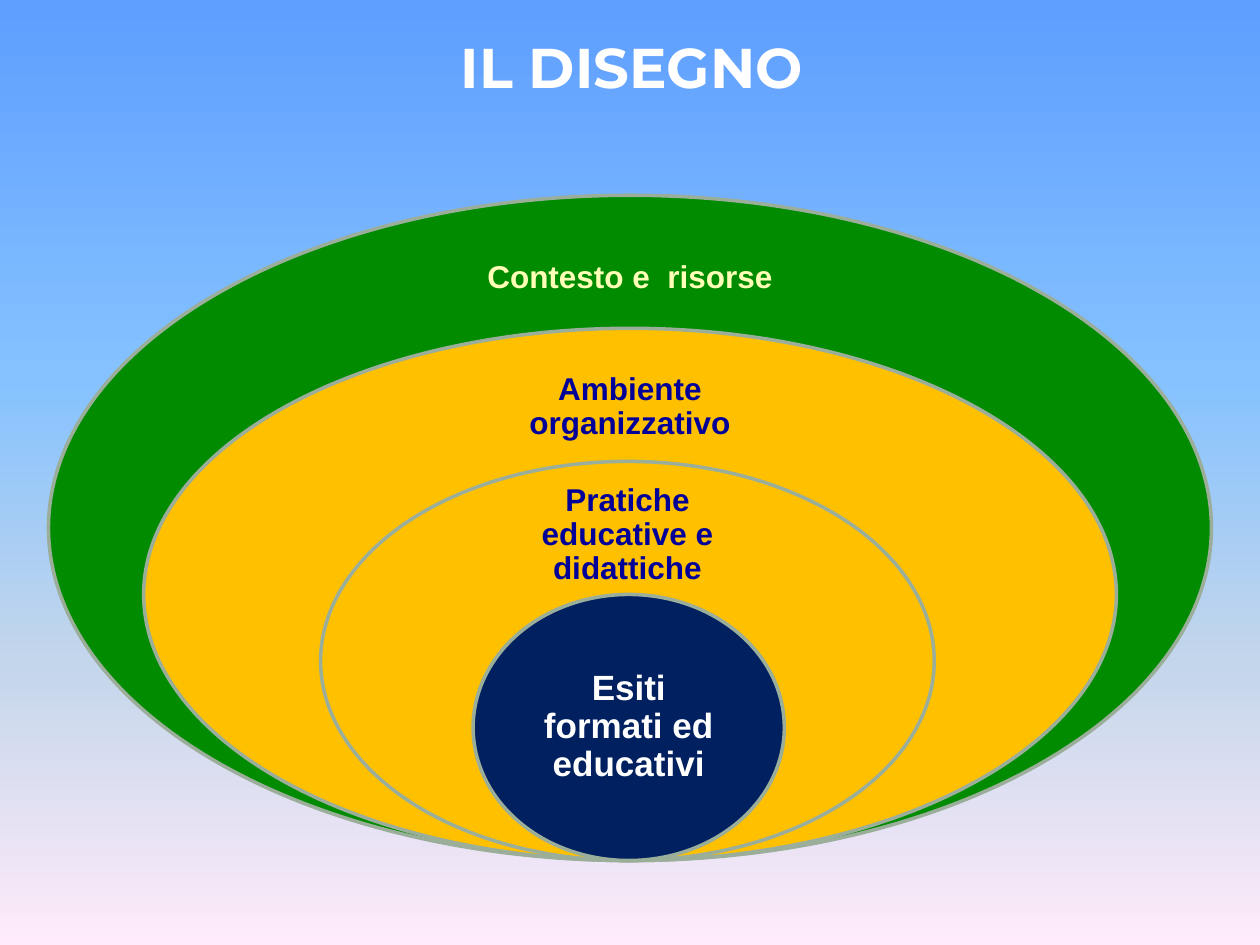
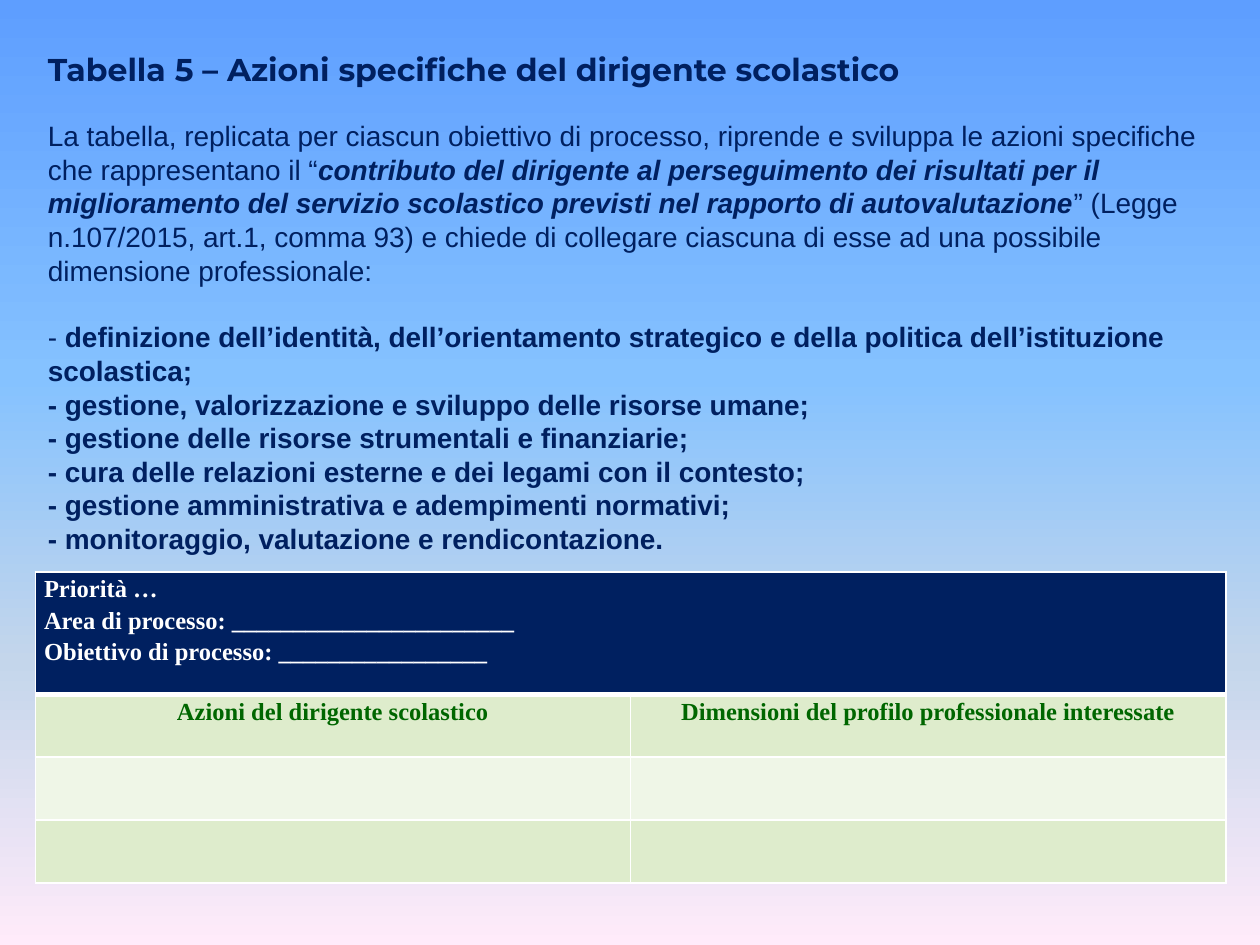
from copy import deepcopy

from lxml import etree
from pptx import Presentation
from pptx import util as u
from pptx.dml.color import RGBColor
from pptx.enum import shapes, text
from pptx.oxml import ns

# Content
COLORS = {
    "navy": "002060", "blue": "000099", "green": "008B00", "amber": "FFC000",
    "cream": "FFFFB7", "white": "FFFFFF", "outline": "9AAE9A",
    "leaf": "006600", "row dark": "DEECCC", "row light": "EFF6E7",
}
BACKGROUND = [(0, "5E9EFF"), (0.4, "85C2FF"), (0.7, "C4D6EB"), (1, "FFEBFA")]

DIAGRAM_TITLE = "IL DISEGNO"
RING_BOTTOM, RING_HEIGHT, RING_STEP = 6.83, 5.28, 0.2
# centre, ring width, fill, label, label (top, width, height), inset, size, colour
RINGS = [
    (5.0, 9.23, "green", "Contesto e  risorse", (1.81, 2.58, 0.79), 0.14, 18, "cream"),
    (5.0, 7.72, "amber", "Ambiente organizzativo", (2.85, 2.7, 0.76), 0.14, 18, "blue"),
    (4.98, 4.87, "amber", "Pratiche educative e didattiche", (3.89, 2.27, 0.71), 0.14, 18, "blue"),
    (4.99, 2.47, "navy", "Esiti formati ed educativi", (5.24, 1.75, 1.06), 0.16, 20, "white"),
]

TABLE_TITLE = "Tabella 5 – Azioni specifiche del dirigente scolastico"
INTRO = [
    ("La tabella, replicata per ciascun obiettivo di processo, riprende e sviluppa "
     "le azioni specifiche che rappresentano il “", {}),
    ("contributo del dirigente al perseguimento dei risultati per il miglioramento "
     "del servizio scolastico previsti nel rapporto di autovalutazione",
     {"bold": True, "italic": True}),
    ("” (Legge n.107/2015, art.1, comma 93) e chiede di collegare ciascuna di esse "
     "ad una possibile dimensione professionale:", {}),
]
DIMENSIONS = [
    "definizione dell’identità, dell’orientamento strategico e della politica "
    "dell’istituzione scolastica;",
    "gestione, valorizzazione e sviluppo delle risorse umane;",
    "gestione delle risorse strumentali e finanziarie;",
    "cura delle relazioni esterne e dei legami con il contesto;",
    "gestione amministrativa e adempimenti normativi;",
    "monitoraggio, valutazione e rendicontazione.",
]
OBJECTIVE = ["Priorità …", "Area di processo: " + "_" * 23,
             "Obiettivo di processo: " + "_" * 17]
COLUMNS = ["Azioni del dirigente scolastico",
           "Dimensioni del profilo professionale interessate"]
ROW_HEIGHTS = [0.97, 0.5, 0.5, 0.5]
ROW_FILLS = ["navy", "row dark", "row light", "row dark"]


# Shared helpers
def color(name):
    return RGBColor.from_string(COLORS[name])


def inches(*lengths):
    return [u.Inches(length) for length in lengths]


def write(frame, words, *, size, ink, font="Arial", bold=False, italic=False,
          align="LEFT", spacing=None, after=0, extend=False):
    """Add a paragraph, or extend the last one; a blank frame is filled first."""
    para = frame.paragraphs[-1]
    if para.runs and not extend:
        para = frame.add_paragraph()
    para.alignment = getattr(text.PP_ALIGN, align)
    para.line_spacing = spacing
    para.space_after = u.Pt(after)
    span = para.add_run()
    span.text = words
    span.font.name, span.font.size = font, u.Pt(size)
    span.font.bold, span.font.italic = bold, italic
    span.font.color.rgb = color(ink)


def set_insets(target, side, top, bottom):
    target.margin_left = target.margin_right = u.Inches(side)
    target.margin_top, target.margin_bottom = inches(top, bottom)


def paint_background(master):
    fill = master.background.fill
    fill.gradient()
    fill.gradient_angle = 270
    stop_list = next(master.element.iter(ns.qn("a:gsLst")))
    for _ in range(len(BACKGROUND) - len(stop_list)):
        stop_list.append(deepcopy(stop_list[0]))
    for stop, (position, tint) in zip(fill.gradient_stops, BACKGROUND):
        stop.position = position
        stop.color.rgb = RGBColor.from_string(tint)


def add_titled_page(deck, left, top, width, height, inset_top=0.05):
    page = deck.slides.add_slide(deck.slide_layouts[5])
    title = page.shapes.title
    title.left, title.top, title.width, title.height = inches(left, top, width, height)
    frame = title.text_frame
    frame.word_wrap = True
    frame.auto_size = text.MSO_AUTO_SIZE.NONE
    frame.vertical_anchor = text.MSO_ANCHOR.TOP
    set_insets(frame, 0.1, inset_top, 0.05)
    return page, frame


def add_border(cell, side, width):
    line = etree.SubElement(cell._tc.get_or_add_tcPr(), ns.qn(f"a:ln{side}"),
                            w=str(u.Pt(width)))
    fill = etree.SubElement(line, ns.qn("a:solidFill"))
    etree.SubElement(fill, ns.qn("a:srgbClr"), val=COLORS["white"])


# Nested rings
def build_diagram(deck):
    page, title = add_titled_page(deck, 0.92, 0.21, 8.19, 0.64)
    write(title, DIAGRAM_TITLE, size=32, ink="white", font="Montserrat",
          bold=True, align="CENTER")
    for index, (center, width, fill, label, place, inset, size, ink) in enumerate(RINGS):
        height = RING_HEIGHT * (1 - RING_STEP * index)
        ring = page.shapes.add_shape(
            shapes.MSO_SHAPE.OVAL,
            *inches(center - width / 2, RING_BOTTOM - height, width, height))
        ring.shadow.inherit = False
        ring.fill.solid()
        ring.fill.fore_color.rgb = color(fill)
        ring.line.color.rgb = color("outline")
        ring.line.width = u.Pt(2)

        top, label_width, label_height = place
        box = page.shapes.add_textbox(
            *inches(center - label_width / 2, top, label_width, label_height))
        frame = box.text_frame
        frame.word_wrap = True
        frame.vertical_anchor = text.MSO_ANCHOR.MIDDLE
        set_insets(frame, inset, inset, inset)
        write(frame, label, size=size, ink=ink, bold=True, align="CENTER", spacing=0.9)


# Explanation and form
def build_form(deck):
    page, frame = add_titled_page(deck, 0.28, 0.13, 9.45, 4.35, inset_top=0.27)
    write(frame, TABLE_TITLE, size=18, ink="navy", font="Montserrat", bold=True, after=17.5)
    for index, (words, style) in enumerate(INTRO):
        write(frame, words, size=16, ink="navy", after=19, extend=index > 0, **style)
    for index, words in enumerate(DIMENSIONS):
        write(frame, "- ", size=16, ink="navy", bold=index > 0)
        write(frame, words, size=16, ink="navy", bold=True, extend=True)

    table = page.shapes.add_table(len(ROW_HEIGHTS), len(COLUMNS),
                                  *inches(0.28, 4.54, 9.45, sum(ROW_HEIGHTS))).table
    for index, (height, fill) in enumerate(zip(ROW_HEIGHTS, ROW_FILLS)):
        table.rows[index].height = u.Inches(height)
        for cell in table.rows[index].cells:
            for side in "LRTB":
                heavy = (index, side) in [(0, "B"), (1, "T")]
                add_border(cell, side, 3 if heavy else 1)
            cell.fill.solid()
            cell.fill.fore_color.rgb = color(fill)
            if index < 2:
                set_insets(cell, 0.07, 0, 0)

    cell_style = {"size": 14, "font": "Times New Roman", "bold": True, "spacing": 1.15}
    heading = table.cell(0, 0)
    heading.merge(table.cell(0, len(COLUMNS) - 1))
    for words in OBJECTIVE:
        write(heading.text_frame, words, ink="white", align="JUSTIFY", **cell_style)
    for column, words in enumerate(COLUMNS):
        write(table.cell(1, column).text_frame, words, ink="leaf", align="CENTER",
              **cell_style)


def main():
    deck = Presentation()
    deck.slide_width, deck.slide_height = inches(10, 7.5)
    paint_background(deck.slide_master)
    build_diagram(deck)
    build_form(deck)
    deck.save("out.pptx")


if __name__ == "__main__":
    main()
